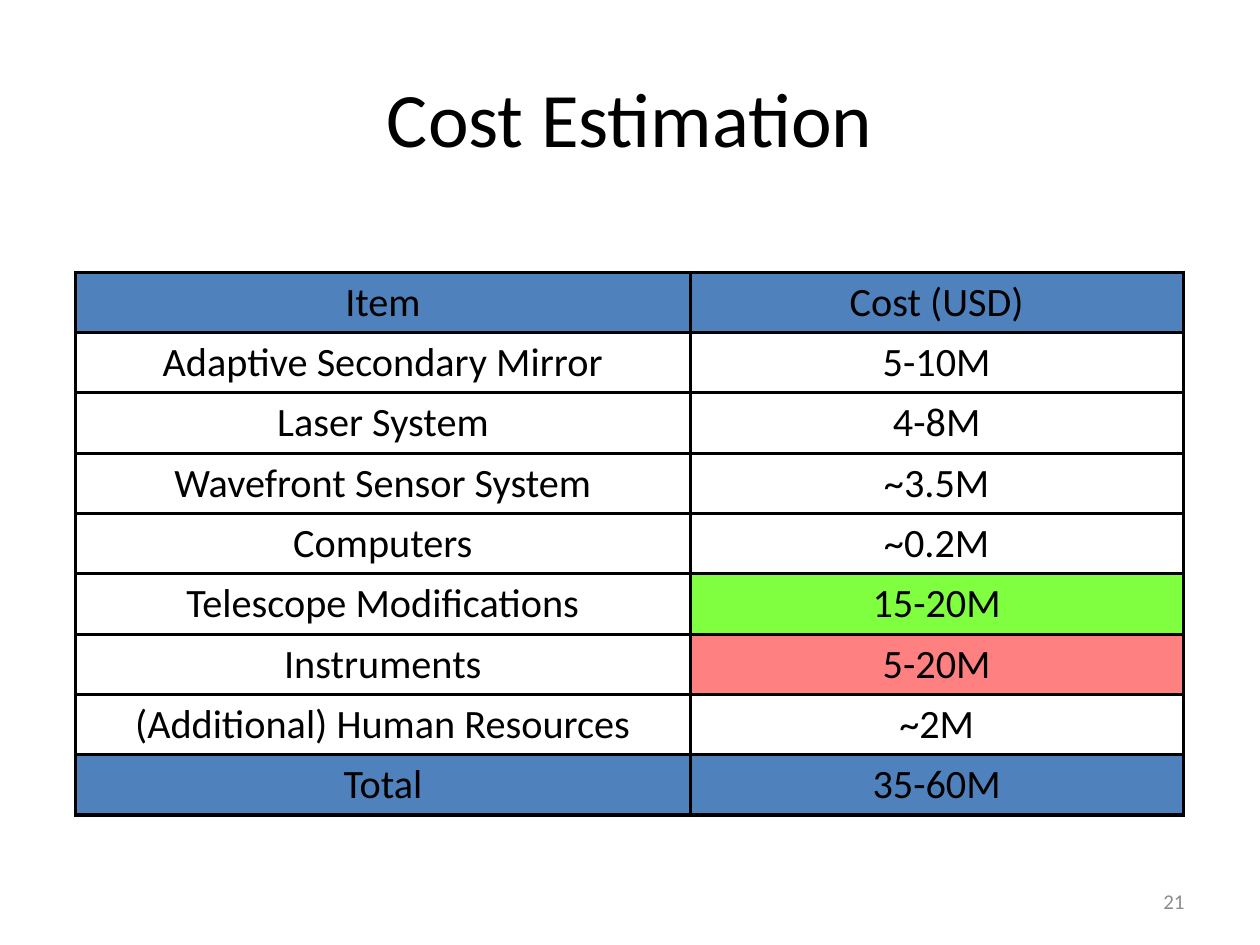
from lxml.etree import SubElement
from pptx import Presentation
from pptx.dml.color import RGBColor
from pptx.enum.text import MSO_ANCHOR as Anchor, PP_ALIGN as Align
from pptx.oxml.ns import qn
from pptx.util import Inches, Pt

BLACK, WHITE, BLUE, GREEN, RED, GREY = (
    "000000", "FFFFFF", "4F81BD", "80FF40", "FF8080", "8C8C8C")
COSTS = [
    ("Item", "Cost (USD)"),
    ("Adaptive Secondary Mirror", "5-10M"),
    ("Laser System", "4-8M"),
    ("Wavefront Sensor System", "~3.5M"),
    ("Computers", "~0.2M"),
    ("Telescope Modifications", "15-20M"),
    ("Instruments", "5-20M"),
    ("(Additional) Human Resources", "~2M"),
    ("Total", "35-60M"),
]
ROW_FILLS = {"Item": (BLUE, BLUE), "Telescope Modifications": (WHITE, GREEN),
             "Instruments": (WHITE, RED), "Total": (BLUE, BLUE)}
COLUMN_WIDTHS = (4.88, 3.91)
ROW_HEIGHT = 4.31 / len(COSTS)
CELL_FORMAT = {"vertical_anchor": Anchor.MIDDLE} | {
    f"margin_{side}": Inches(0.04) for side in ("left", "right", "top", "bottom")}


def rgb(hex_color):
    """Turn a hex string into a colour."""
    return RGBColor.from_string(hex_color)


def apply_format(target, values):
    """Set each named attribute on the target."""
    for name, value in values.items():
        setattr(target, name, value)


def write_text(frame, text, size, color, align):
    """Write one formatted line into a text frame."""
    line = frame.paragraphs[0]
    line.alignment = align
    run = line.add_run()
    run.text = text
    apply_format(run.font, {"name": "Calibri", "size": Pt(size)})
    run.font.color.rgb = rgb(color)


def add_label(slide, place, text, size, color, align):
    """Add a vertically centred text box."""
    frame = slide.shapes.add_textbox(*map(Inches, place)).text_frame
    apply_format(frame, {"word_wrap": True, "vertical_anchor": Anchor.MIDDLE})
    write_text(frame, text, size, color, align)


def add_borders(cell, color, width):
    """Draw a solid line on all four sides of a cell."""
    properties = cell._tc.get_or_add_tcPr()
    for side in ("lnL", "lnR", "lnT", "lnB"):
        border = SubElement(properties, qn(f"a:{side}"), w=str(Pt(width)))
        solid = SubElement(border, qn("a:solidFill"))
        SubElement(solid, qn("a:srgbClr"), val=color)


def fill_cell(cell, text, fill):
    """Give a cell its text, borders and fill."""
    apply_format(cell, CELL_FORMAT)
    write_text(cell.text_frame, text, 23, BLACK, Align.CENTER)
    add_borders(cell, BLACK, 2)
    cell.fill.solid()
    cell.fill.fore_color.rgb = rgb(fill)


def add_cost_table(slide, left, top):
    """Add the table of items and their costs."""
    size = (sum(COLUMN_WIDTHS), ROW_HEIGHT * len(COSTS))
    table = slide.shapes.add_table(
        len(COSTS), len(COLUMN_WIDTHS), *map(Inches, (left, top, *size))).table
    apply_format(table, {"first_row": False, "horz_banding": False})
    for column, width in zip(table.columns, COLUMN_WIDTHS):
        column.width = Inches(width)
    for row, entry in zip(table.rows, COSTS):
        row.height = Inches(ROW_HEIGHT)
        fills = ROW_FILLS.get(entry[0], (WHITE, WHITE))
        for cell, text, fill in zip(row.cells, entry, fills):
            fill_cell(cell, text, fill)


def main():
    """Build the cost estimation slide."""
    deck = Presentation()
    apply_format(deck, {"slide_width": Inches(10), "slide_height": Inches(7.5)})
    slide = deck.slides.add_slide(deck.slide_layouts[6])
    add_label(slide, (0.5, 0.3, 9, 1.25), "Cost Estimation", 44, BLACK, Align.CENTER)
    add_cost_table(slide, 0.6, 2.16)
    add_label(slide, (7.17, 6.95, 2.33, 0.4), "21", 12, GREY, Align.RIGHT)
    deck.save("out.pptx")


if __name__ == "__main__":
    main()
